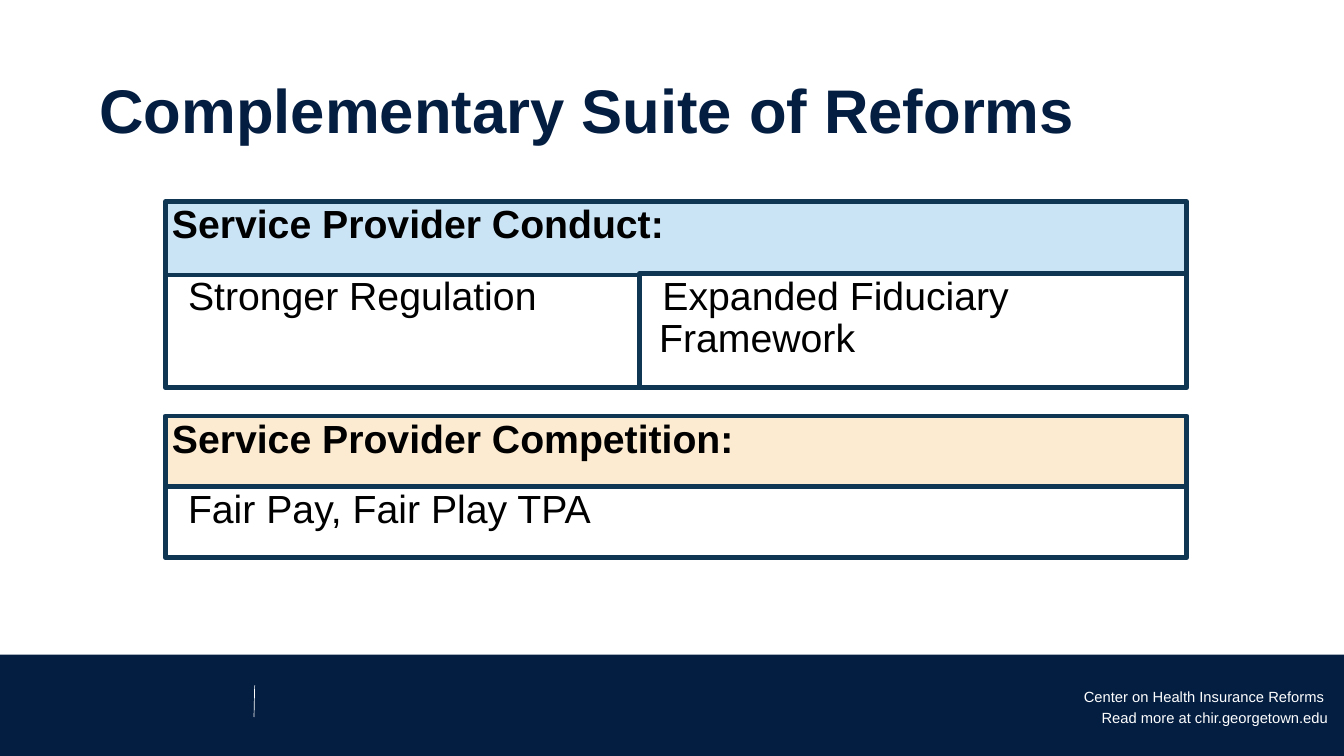
import pptx
import pptx.util
import pptx.dml.color
import pptx.enum.shapes
import pptx.enum.text
import pptx.oxml.ns
import lxml.etree

EMU_PER_PX = 9144  # 100 px to the inch
WIDTH, HEIGHT = 2000, 1125
COLOURS = {
    "navy": "041E42",
    "border": "0F3754",
    "blue": "CAE4F6",
    "cream": "FCEBD1",
    "white": "FFFFFF",
    "off_white": "FEFEFE",
    "black": "000000",
}


def px(length):
    return pptx.util.Emu(length * EMU_PER_PX)


def colour(name):
    return pptx.dml.color.RGBColor.from_string(COLOURS[name])


def add_element(parent, tag):
    return lxml.etree.SubElement(parent, pptx.oxml.ns.qn(tag))


class SlideBuilder:
    font_name = "Arial"
    panel_size = 42
    border_width = 5

    def __init__(self, slide):
        self.slide = slide

    def fill_text(self, shape, text, size, colour_name, bold=False, spacing=0.9,
                  align=pptx.enum.text.PP_ALIGN.LEFT,
                  anchor=pptx.enum.text.MSO_ANCHOR.TOP, margins=(10, 5)):
        frame = shape.text_frame
        frame.text = text
        frame.word_wrap = True
        frame.vertical_anchor = anchor
        frame.margin_left = frame.margin_right = px(margins[0])
        frame.margin_top = frame.margin_bottom = px(margins[1])
        paragraph = frame.paragraphs[0]
        paragraph.alignment = align
        paragraph.line_spacing = spacing
        font = paragraph.runs[0].font
        font.name = self.font_name
        font.size = pptx.util.Pt(size)
        font.bold = bold
        font.color.rgb = colour(colour_name)
        return paragraph

    def text(self, left, top, width, height, text, size, colour_name, **style):
        box = self.slide.shapes.add_textbox(px(left), px(top), px(width), px(height))
        self.fill_text(box, text, size, colour_name, **style)

    def rectangle(self, left, top, width, height, fill):
        shape = self.slide.shapes.add_shape(
            pptx.enum.shapes.MSO_SHAPE.RECTANGLE,
            px(left), px(top), px(width), px(height))
        shape.shadow.inherit = False
        shape.fill.solid()
        shape.fill.fore_color.rgb = colour(fill)
        shape.line.fill.background()
        return shape

    def panel(self, left, top, width, height, text, fill="white", heading=False):
        """Bordered box: bold text for a heading, indented text otherwise."""
        shape = self.rectangle(left, top, width, height, fill)
        shape.line.color.rgb = colour("border")
        shape.line.width = pptx.util.Pt(self.border_width)
        add_element(shape._element.spPr.get_or_add_ln(), "a:round")
        paragraph = self.fill_text(shape, text, self.panel_size, "black", bold=heading)
        if not heading:
            properties = paragraph._p.get_or_add_pPr()
            properties.set("marL", str(px(19)))
            properties.set("indent", str(px(5)))

    def line(self, start, end, colour_name, width):
        connector = self.slide.shapes.add_connector(
            pptx.enum.shapes.MSO_CONNECTOR.STRAIGHT,
            px(start[0]), px(start[1]), px(end[0]), px(end[1]))
        connector.line.color.rgb = colour(colour_name)
        connector.line.width = pptx.util.Pt(width)
        add_element(connector._element.spPr, "a:effectLst")


def main():
    presentation = pptx.Presentation()
    presentation.slide_width = px(WIDTH)
    presentation.slide_height = px(HEIGHT)
    builder = SlideBuilder(presentation.slides.add_slide(presentation.slide_layouts[6]))

    footer_top = 974
    builder.rectangle(0, footer_top, WIDTH, HEIGHT - footer_top, "navy")
    builder.line((379, 1020), (378, 1067), "off_white", 0.75)
    footer_style = {"spacing": 1.4, "margins": (0, 0),
                    "align": pptx.enum.text.PP_ALIGN.CENTER}
    builder.text(1601, 1013, 382, 101, "Center on Health Insurance Reforms",
                 15.8, "white", **footer_style)
    builder.text(1599, 1044, 418, 27, "Read more at chir.georgetown.edu",
                 15.8, "off_white", **footer_style)

    builder.text(138, 60, 1725, 217, "Complementary Suite of Reforms", 66, "navy",
                 bold=True, anchor=pptx.enum.text.MSO_ANCHOR.MIDDLE)

    left, width, left_column = 246, 1520, 706
    builder.panel(left, 407, left_column, 170, "Stronger Regulation")
    builder.panel(left, 300, width, 109, "Service Provider Conduct:", "blue", heading=True)
    builder.panel(left, 619, width, 106, "Service Provider Competition:", "cream", heading=True)
    builder.panel(left + left_column, 407, width - left_column, 170,
                  "Expanded Fiduciary Framework")
    builder.panel(left, 724, width, 106, "Fair Pay, Fair Play TPA")

    presentation.save("out.pptx")


if __name__ == "__main__":
    main()
